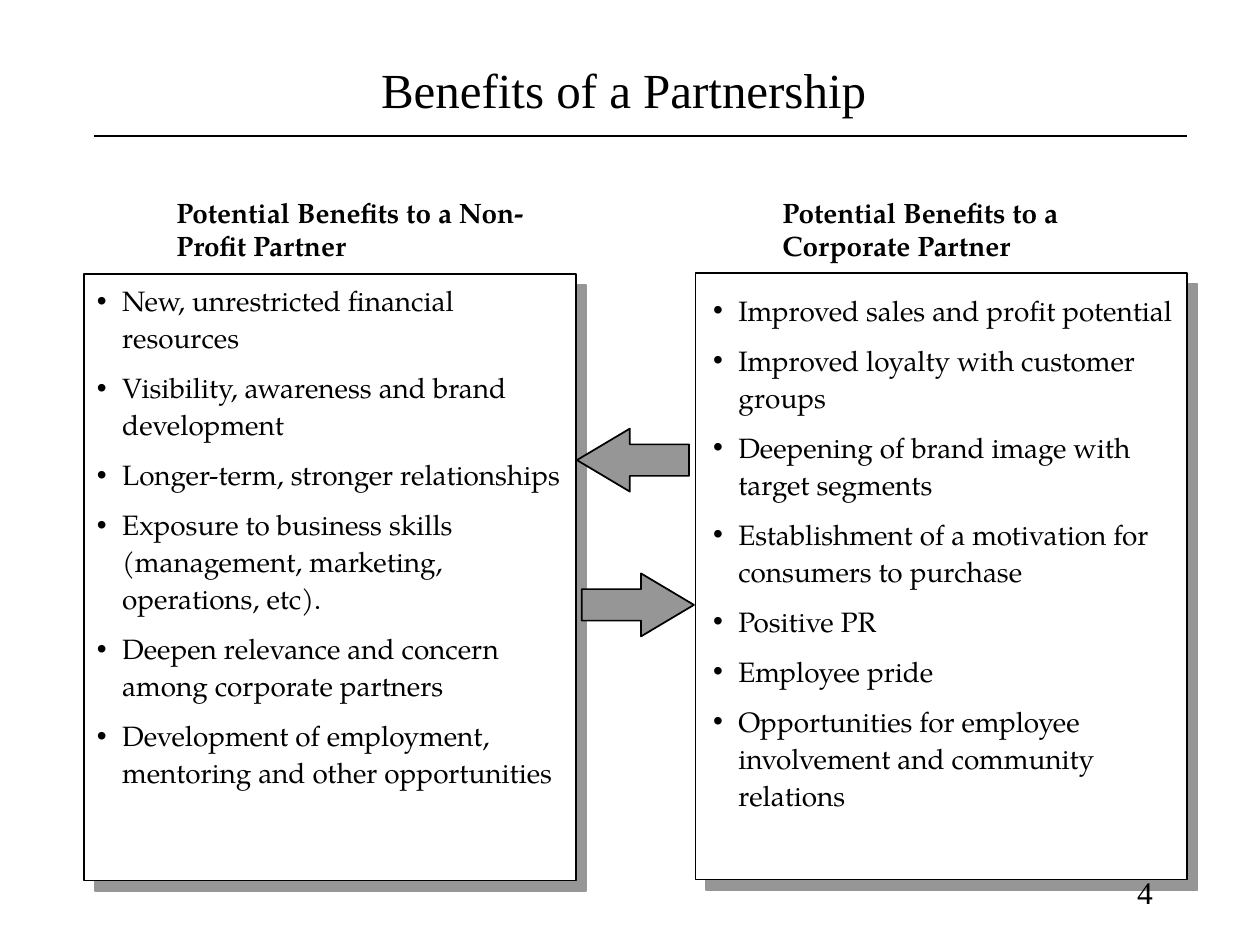
from lxml import etree
from pptx import Presentation
from pptx.dml.color import RGBColor
from pptx.enum.shapes import MSO_CONNECTOR, MSO_SHAPE
from pptx.enum.text import MSO_ANCHOR, MSO_AUTO_SIZE, PP_ALIGN
from pptx.oxml.ns import qn
from pptx.util import Cm, Pt

RECT, ARROW = MSO_SHAPE.RECTANGLE, MSO_SHAPE.RIGHT_ARROW
STRAIGHT = MSO_CONNECTOR.STRAIGHT
TOP, MIDDLE = MSO_ANCHOR.TOP, MSO_ANCHOR.MIDDLE
LEFT, CENTER, RIGHT = PP_ALIGN.LEFT, PP_ALIGN.CENTER, PP_ALIGN.RIGHT
NO_FIT = MSO_AUTO_SIZE.NONE

COLORS = {"ink": "000000", "paper": "FFFFFF", "gray": "969696"}
SERIF, BOOK = "Times New Roman", "TeX Gyre Pagella"
COMPARISON_LAYOUT = 4

COLUMNS = [
    {
        "heading": "Potential Benefits to a Non-Profit Partner",
        "heading_box": (3.3, 3.81, 7.62, 1.68),
        "panel_box": (1.7, 5.53, 9.91, 12.22),
        "list_box": (1.7, 5.53, 9.91, 11.76),
        "items": [
            "New, unrestricted financial resources",
            "Visibility, awareness and brand development",
            "Longer-term, stronger relationships",
            "Exposure to business skills (management, marketing, operations, etc).",
            "Deepen relevance and concern among corporate partners",
            "Development of employment, mentoring and other opportunities",
        ],
    },
    {
        "heading": "Potential Benefits to a Corporate Partner",
        "heading_box": (15.52, 3.81, 8.08, 1.68),
        "panel_box": (14.02, 5.51, 9.91, 12.22),
        "list_box": (14.12, 5.72, 9.8, 12.09),
        "items": [
            "Improved sales and profit potential",
            "Improved loyalty with customer groups",
            "Deepening of brand image with target segments",
            "Establishment of a motivation for consumers to purchase",
            "Positive PR",
            "Employee pride",
            "Opportunities for employee involvement and community relations",
        ],
    },
]
ARROWS = [(11.73, 11.56, 0), (11.63, 8.64, 180)]


def rgb(name):
    return RGBColor.from_string(COLORS[name])


def place(s, box):
    s.left, s.top, s.width, s.height = map(Cm, box)


def write(s, lines, font, size, bold=False, align=LEFT, anchor=TOP):
    tf = s.text_frame
    tf.text = "\n".join(lines)
    tf.word_wrap = True
    tf.auto_size = NO_FIT
    tf.vertical_anchor = anchor
    for p in tf.paragraphs:
        p.alignment = align
        p.space_before = Pt(0)
        for r in p.runs:
            r.font.name = font
            r.font.size = Pt(size)
            r.font.bold = bold
            r.font.color.rgb = rgb("ink")


def write_list(s, items):
    write(s, items, BOOK, 16)
    for p in s.text_frame.paragraphs:
        p.line_spacing = 1.1
        p.space_before = Pt(6)
        p.space_after = Pt(1.5)
        pPr = p._p.get_or_add_pPr()
        pPr.set("marL", str(Cm(0.51)))
        pPr.set("indent", str(Cm(-0.51)))


def add_shape(slide, kind, box, fill):
    s = slide.shapes.add_shape(kind, *map(Cm, box))
    s.fill.solid()
    s.fill.fore_color.rgb = rgb(fill)
    s.line.color.rgb = rgb("ink")
    s.line.width = Pt(1)
    s.shadow.inherit = False
    return s


def add_panel(slide, box):
    s = add_shape(slide, RECT, box, "paper")
    effects = s._element.spPr.find(qn("a:effectLst"))
    shadow = etree.SubElement(effects, qn("a:outerShdw"), blurRad="0",
                              dist=str(Pt(8.5)), dir="2700000",
                              algn="ctr", rotWithShape="0")
    etree.SubElement(shadow, qn("a:srgbClr"), val=COLORS["gray"])
    slide.shapes.title._element.addprevious(s._element)


def add_arrow(slide, left, top, rotation):
    s = add_shape(slide, ARROW, (left, top, 2.26, 1.27), "gray")
    s.adjustments[0] = 0.5
    s.adjustments[1] = 0.84
    s.rotation = rotation


def add_rule(slide, x1, x2, y):
    c = slide.shapes.add_connector(STRAIGHT, Cm(x1), Cm(y), Cm(x2), Cm(y))
    c.line.color.rgb = rgb("ink")
    c.line.width = Pt(1)
    etree.SubElement(c._element.spPr, qn("a:effectLst"))


def main():
    prs = Presentation()
    prs.slide_width, prs.slide_height = Cm(25.4), Cm(19.05)
    slide = prs.slides.add_slide(prs.slide_layouts[COMPARISON_LAYOUT])

    title, *bodies = slide.placeholders
    place(title, (1.9, 0.2, 21.59, 3.18))
    write(title, ["Benefits of a Partnership "], SERIF, 28,
          align=CENTER, anchor=MIDDLE)
    add_rule(slide, 1.9, 23.93, 2.74)

    for column, heading, body in zip(COLUMNS, bodies[::2], bodies[1::2]):
        add_panel(slide, column["panel_box"])
        place(heading, column["heading_box"])
        write(heading, [column["heading"]], BOOK, 16, bold=True)
        place(body, column["list_box"])
        write_list(body, column["items"])

    for left, top, rotation in ARROWS:
        add_arrow(slide, left, top, rotation)

    number = slide.shapes.add_textbox(*map(Cm, (18.21, 17.35, 5.28, 1.27)))
    write(number, ["4"], SERIF, 18, align=RIGHT, anchor=MIDDLE)
    prs.save("out.pptx")


if __name__ == "__main__":
    main()
